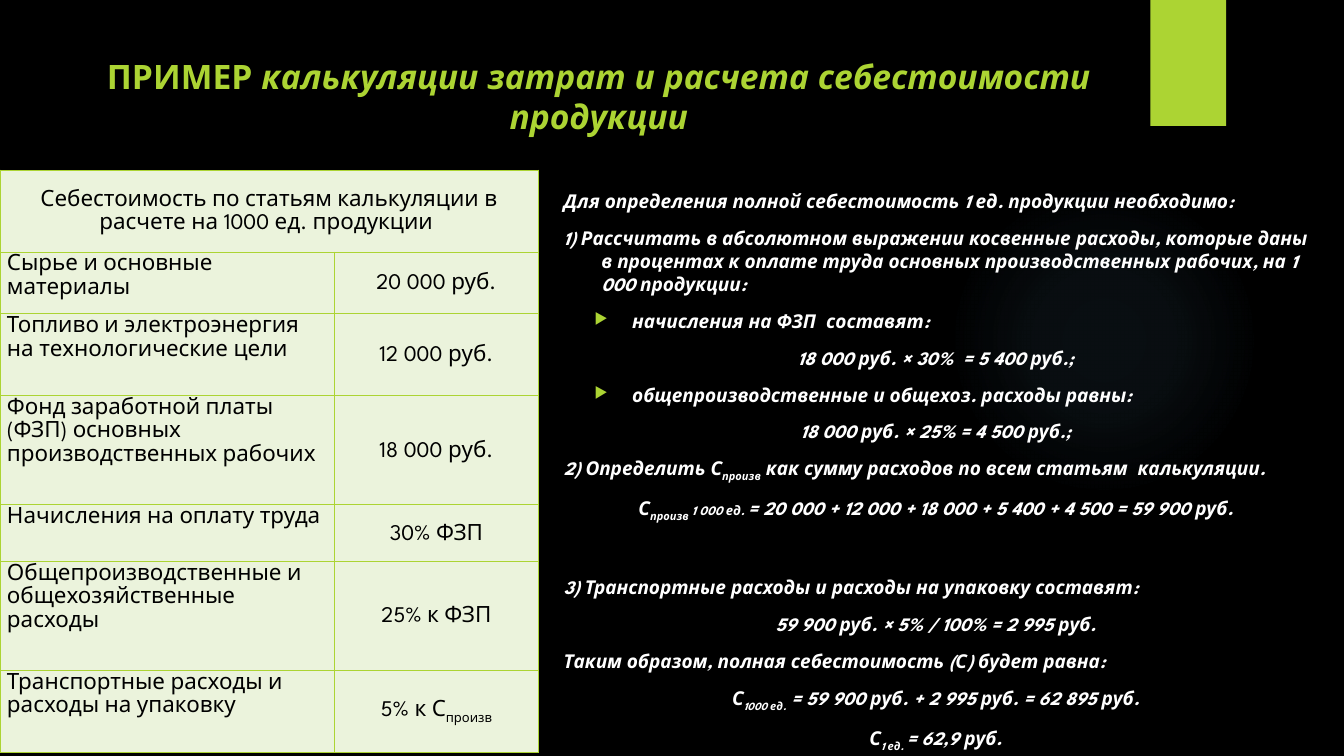
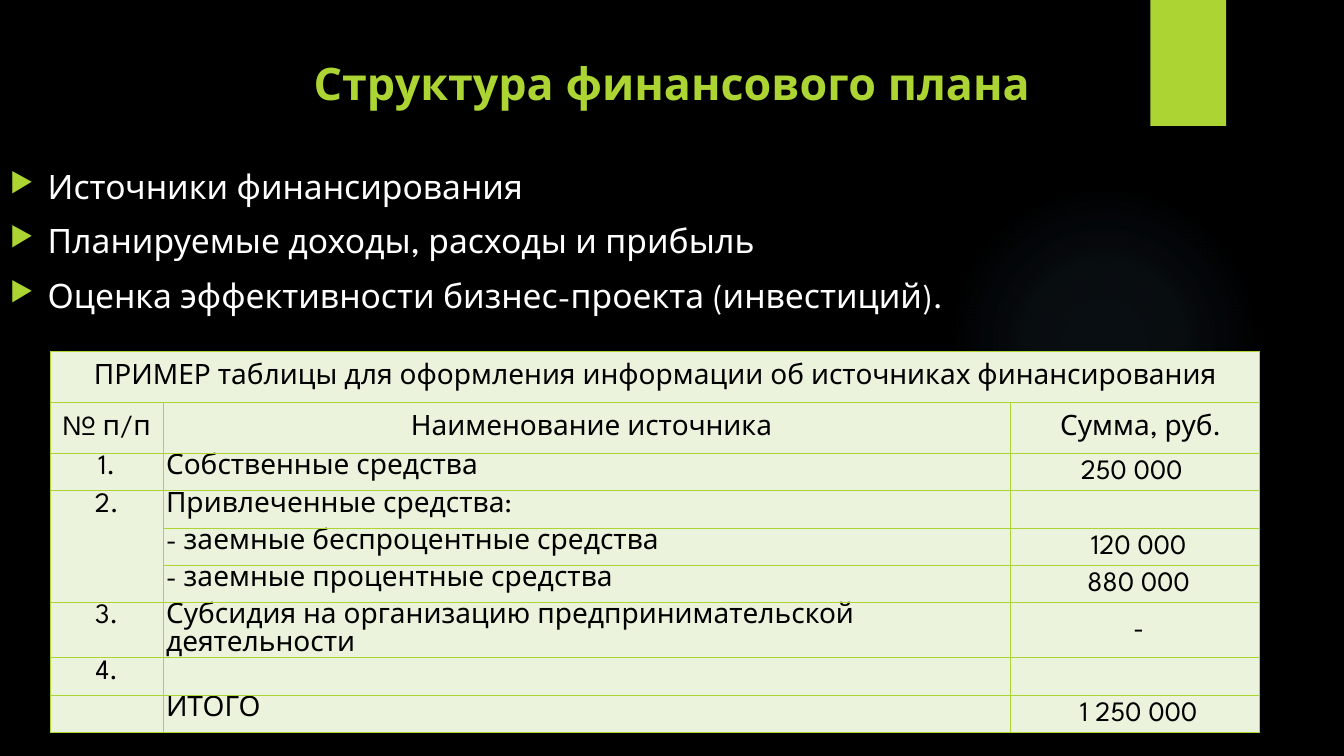
from dataclasses import dataclass

from lxml import etree
from pptx import Presentation
from pptx.dml.color import RGBColor
from pptx.enum.shapes import MSO_SHAPE
from pptx.enum.text import MSO_ANCHOR as Anchor, MSO_AUTO_SIZE, PP_ALIGN as Align
from pptx.oxml import parse_xml
from pptx.oxml.ns import nsdecls, qn
from pptx.util import Pt


@dataclass(frozen=True)
class Theme:
    font: str = "League Spartan"
    background: str = "000000"
    accent: str = "ACD433"
    glow: str = "7AC4F0"
    light: str = "FFFFFF"
    dark: str = "000000"
    cell: str = "EBF3DC"
    example_title: float = 24
    plan_title: float = 32
    steps: float = 13.6
    small: float = 9.3
    points: float = 24
    cost_table: float = 16
    source_table: float = 20
    paragraph_gap: float = 10
    hanging: float = 27


THEME = Theme()

# A paragraph is a list of runs: plain strings or (text, style) pairs.
EXAMPLE_TITLE = ["ПРИМЕР", (" калькуляции затрат и расчета себестоимости продукции", "italic")]
PLAN_TITLE = ["Структура финансового плана"]

COST_ROWS = [
    ["Себестоимость по статьям калькуляции в расчете на 1000 ед. продукции ", ""],
    ["Сырье и основные материалы", "20 000 руб."],
    ["Топливо и электроэнергия на технологические цели", "12 000 руб."],
    ["Фонд заработной платы (ФЗП) основных производственных рабочих", "18 000 руб."],
    ["Начисления на оплату труда", "30% ФЗП"],
    ["Общепроизводственные и общехозяйственные расходы", "25% к ФЗП"],
    ["Транспортные расходы и расходы на упаковку", ["5% к С", ("произв", "sub")]],
]
COST_HEIGHTS = [58.5, 40.5, 58.5, 78, 40.5, 78, 58.5]
COST_COLUMNS = [(239, Align.LEFT, Anchor.TOP), (145.5, Align.CENTER, Anchor.MIDDLE)]

SOURCE_ROWS = [
    ["ПРИМЕР таблицы для оформления информации об источниках финансирования", "", ""],
    ["№ п/п", "Наименование источника", "Сумма, руб."],
    ["1.", "Собственные средства", "250 000 "],
    ["2.", "Привлеченные средства:", ""],
    ["", "- заемные беспроцентные средства", " 120 000"],
    ["", "- заемные процентные средства", " 880 000"],
    ["3.", "Субсидия на организацию предпринимательской деятельности", " -"],
    ["4.", "", ""],
    ["", "ИТОГО", " 1 250 000"],
]
SOURCE_HEIGHTS = [36.5] * 2 + [26.6] * 4 + [39.3] + [26.6] * 2
SOURCE_COLUMNS = [
    (80.6, Align.CENTER, Anchor.TOP),
    (605.2, Align.LEFT, Anchor.TOP),
    (178.2, Align.CENTER, Anchor.MIDDLE),
]

STEPS = [
    ("step", ["Для определения полной себестоимость 1 ед. продукции необходимо:"]),
    ("step", ["1) Рассчитать в абсолютном выражении косвенные расходы, которые даны в процентах "
              "к оплате труда основных производственных рабочих, на 1 000 продукции:"]),
    ("item", ["начисления на ФЗП  составят:"]),
    ("formula", ["18 000 руб. × 30%  = 5 400 руб.;"]),
    ("item", ["общепроизводственные и общехоз. расходы равны:"]),
    ("formula", ["18 000 руб. × 25% = 4 500 руб.;"]),
    ("step", ["2) Определить С", ("произв", "sub"),
              " как сумму расходов по всем статьям  калькуляции."]),
    ("formula", ["С", ("произв ", "sub"), ("1 000 ед. ", "small"),
                 "= 20 000 + 12 000 + 18 000 + 5 400 + 4 500 = 59 900 руб."]),
    ("new part", ["3) Транспортные расходы и расходы на упаковку составят:"]),
    ("formula", ["59 900 руб. × 5% / 100% = 2 995 руб."]),
    ("step", ["Таким образом, полная себестоимость (С) будет равна:"]),
    ("formula", ["С", ("1000 ед.", "sub"), " = 59 900 руб. + 2 995 руб. = 62 895 руб."]),
    ("formula", ["С", ("1 ед. ", "sub"), "= 62,9 руб."]),
]
POINTS = [
    ("point", ["Источники финансирования"]),
    ("point", ["Планируемые доходы, расходы и прибыль"]),
    ("point", ["Оценка эффективности бизнес-проекта (инвестиций)."]),
]

# kind: alignment, left indent, bullet, space before
KINDS = {
    "step": (Align.LEFT, THEME.hanging, False, THEME.paragraph_gap),
    "new part": (Align.LEFT, THEME.hanging, False, 38),
    "item": (Align.LEFT, 49, True, THEME.paragraph_gap),
    "formula": (Align.CENTER, THEME.hanging, False, THEME.paragraph_gap),
    "point": (Align.LEFT, THEME.hanging, True, THEME.paragraph_gap),
}


def rgb(value):
    return RGBColor.from_string(value)


def set_indent(paragraph, left, first=0):
    properties = paragraph._p.get_or_add_pPr()
    properties.set("marL", str(Pt(left)))
    properties.set("indent", str(Pt(first)))
    return properties


def add_bullet(properties):
    color = etree.SubElement(properties, qn("a:buClr"))
    etree.SubElement(color, qn("a:srgbClr"), val=THEME.accent)
    etree.SubElement(properties, qn("a:buSzPct"), val="80000")
    etree.SubElement(properties, qn("a:buChar"), char="▶")


def write_runs(paragraph, runs, size, color, bold=False, italic=False):
    font = paragraph.font
    font.name, font.size, font.bold, font.italic = THEME.font, Pt(size), bold, italic
    font.color.rgb = rgb(color)
    for part in runs:
        text, style = (part, None) if isinstance(part, str) else part
        run = paragraph.add_run()
        run.text = text
        if style == "italic":
            run.font.italic = True
        elif style == "small":
            run.font.size = Pt(THEME.small)
        elif style == "sub":
            run._r.get_or_add_rPr().set("baseline", "-25000")


def add_decor(slide):
    """Soft glow on the right and the accent tab at the top."""
    glow = slide.shapes.add_shape(MSO_SHAPE.OVAL, Pt(677.5), Pt(132), Pt(222), Pt(222))
    tab = slide.shapes.add_shape(MSO_SHAPE.RECTANGLE, Pt(821.75), 0, Pt(54), Pt(90))
    for shape in (glow, tab):
        shape.shadow.inherit = False
        shape.line.fill.background()
    tab.fill.solid()
    tab.fill.fore_color.rgb = rgb(THEME.accent)
    stops = "".join(
        f'<a:gs pos="{position}000"><a:srgbClr val="{THEME.glow}">'
        f'<a:alpha val="{alpha}000"/></a:srgbClr></a:gs>'
        for position, alpha in ((0, 7), (36, 6), (69, 0)))
    gradient = parse_xml(
        f'<a:gradFill {nsdecls("a")} rotWithShape="1"><a:gsLst>{stops}</a:gsLst>'
        '<a:path path="circle"><a:fillToRect l="50000" t="50000" r="50000" b="50000"/>'
        '</a:path></a:gradFill>')
    glow._element.spPr.find(qn("a:prstGeom")).addnext(gradient)


def add_titled_slide(presentation, runs, size, width, height):
    slide = presentation.slides.add_slide(presentation.slide_layouts[5])
    add_decor(slide)
    title = slide.shapes.title
    title.left, title.top, title.width, title.height = Pt(48), Pt(36), Pt(width), Pt(height)
    frame = title.text_frame
    frame.auto_size = MSO_AUTO_SIZE.NONE
    frame.word_wrap = True
    frame.vertical_anchor = Anchor.TOP
    paragraph = frame.paragraphs[0]
    paragraph.alignment = Align.CENTER
    write_runs(paragraph, runs, size, THEME.accent, bold=True)
    return slide


def add_body(slide, box, entries, size, emphasis=False):
    frame = slide.shapes.add_textbox(*map(Pt, box)).text_frame
    frame.word_wrap = True
    for index, (kind, runs) in enumerate(entries):
        alignment, left, bullet, before = KINDS[kind]
        paragraph = frame.add_paragraph() if index else frame.paragraphs[0]
        paragraph.alignment = alignment
        paragraph.space_before = Pt(before if index else 0)
        properties = set_indent(paragraph, left, -THEME.hanging)
        if bullet:
            add_bullet(properties)
        write_runs(paragraph, runs, size, THEME.light, bold=emphasis, italic=emphasis)


def style_cell(cell, anchor, margin):
    cell.vertical_anchor = anchor
    cell.margin_left = cell.margin_right = Pt(margin)
    cell.margin_top = cell.margin_bottom = 0
    cell.fill.solid()
    cell.fill.fore_color.rgb = rgb(THEME.cell)
    for index, side in enumerate("LRTB"):
        border = parse_xml(
            f'<a:ln{side} {nsdecls("a")} w="{Pt(0.75)}"><a:solidFill>'
            f'<a:srgbClr val="{THEME.accent}"/></a:solidFill></a:ln{side}>')
        cell._tc.get_or_add_tcPr().insert(index, border)


def add_grid(slide, left, top, rows, heights, columns, size, spacing, margin,
             head_indents=(0,), merges=()):
    """Table whose first row spans all columns; head rows are centred."""
    width = sum(column[0] for column in columns)
    table = slide.shapes.add_table(len(rows), len(columns), Pt(left), Pt(top),
                                   Pt(width), Pt(sum(heights))).table
    table.first_row = table.horz_banding = False
    for row, height in zip(table.rows, heights):
        row.height = Pt(height)
    for column, (column_width, _, _) in zip(table.columns, columns):
        column.width = Pt(column_width)
    head_count = 2 if len(head_indents) > 1 else 1
    for row_index, row in enumerate(rows):
        is_head = row_index < head_count
        for column_index, content in enumerate(row):
            _, alignment, anchor = columns[column_index]
            if is_head:
                alignment, anchor = Align.CENTER, Anchor.MIDDLE
            cell = table.cell(row_index, column_index)
            style_cell(cell, anchor, margin)
            paragraph = cell.text_frame.paragraphs[0]
            paragraph.alignment = alignment
            paragraph.line_spacing = spacing
            if is_head and content:
                set_indent(paragraph, head_indents[column_index])
            runs = [content] if isinstance(content, str) and content else content
            write_runs(paragraph, runs, size, THEME.dark)
    for first, last in [((0, 0), (0, len(columns) - 1)), *merges]:
        table.cell(*first).merge(table.cell(*last))


def build_example(presentation):
    slide = add_titled_slide(presentation, EXAMPLE_TITLE, THEME.example_title, 759.5, 52)
    add_body(slide, (395.5, 132, 546, 381), STEPS, THEME.steps, emphasis=True)
    add_grid(slide, 0, 121.5, COST_ROWS, COST_HEIGHTS, COST_COLUMNS,
             THEME.cost_table, spacing=1.15, margin=5)


def build_plan(presentation):
    slide = add_titled_slide(presentation, PLAN_TITLE, THEME.plan_title, 864, 62)
    add_grid(slide, 36, 251, SOURCE_ROWS, SOURCE_HEIGHTS, SOURCE_COLUMNS,
             THEME.source_table, spacing=1.07, margin=2,
             head_indents=(0, 6.5, 8), merges=[((3, 0), (5, 0))])
    add_body(slide, (0, 115, 864, 136), POINTS, THEME.points)


def main():
    presentation = Presentation()
    presentation.slide_width, presentation.slide_height = Pt(960), Pt(540)
    background = presentation.slide_master.background.fill
    background.solid()
    background.fore_color.rgb = rgb(THEME.background)
    build_example(presentation)
    build_plan(presentation)
    presentation.save("out.pptx")


if __name__ == "__main__":
    main()
